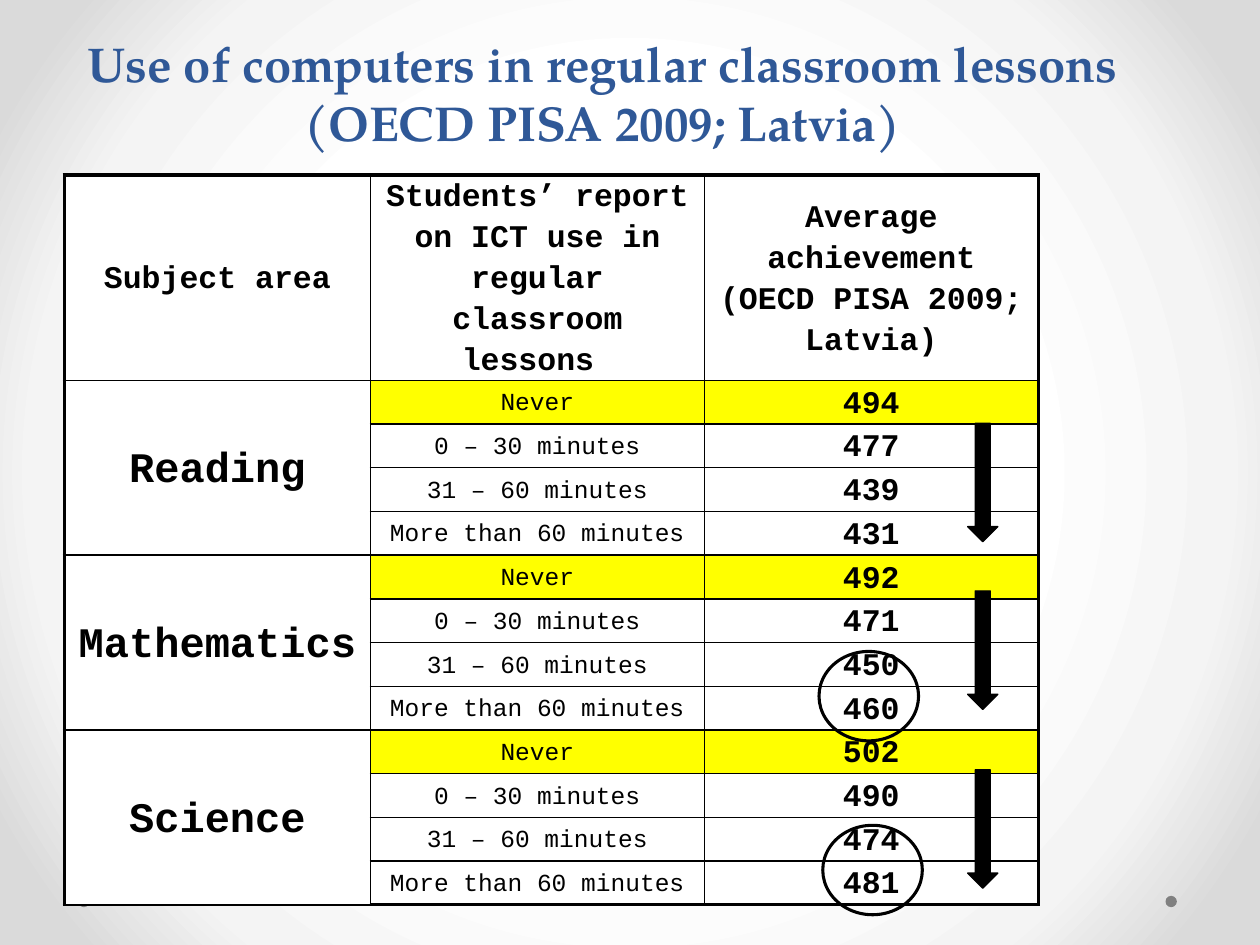
from lxml import etree
from pptx import Presentation
from pptx import util as u
from pptx.dml.color import RGBColor
from pptx.enum import shapes, text
from pptx.oxml import ns

COLS, ROWS = 100, 75
UNIT = u.Inches(0.1)
BLACK = RGBColor(0, 0, 0)
WHITE = RGBColor(0xFF, 0xFF, 0xFF)
YELLOW = RGBColor(0xFF, 0xFF, 0)
BLUE = RGBColor(0x2F, 0x58, 0x97)
GRAY = RGBColor(0x80, 0x80, 0x80)
GLOW = [(50, WHITE), (76, RGBColor(0xF4, 0xF4, 0xF4)), (92, RGBColor(0xDA, 0xDA, 0xDA))]

TITLE = "Use of computers in regular classroom lessons (OECD PISA 2009; Latvia)"
HEADERS = ["Subject area", "Students’ report on ICT use in regular classroom lessons ",
           "Average achievement (OECD PISA 2009; Latvia)"]
USAGE = ["Never", "0 – 30 minutes", "31 – 60 minutes", "More than 60 minutes"]
SCORES = {"Reading": [494, 477, 439, 431],
          "Mathematics": [492, 471, 450, 460],
          "Science": [502, 490, 474, 481]}

HEAD_FONT = {"name": "Courier New", "size": u.Pt(18), "bold": True}
SUBJECT_FONT = {**HEAD_FONT, "size": u.Pt(24)}
USAGE_FONT = {**HEAD_FONT, "size": u.Pt(14), "bold": False}
TITLE_FONT = {"name": "TeX Gyre Pagella", "size": u.Pt(28), "bold": True}


def grid(*cells):
    """Turn grid units into lengths."""
    return [u.Emu(round(c * UNIT)) for c in cells]


def set_attrs(obj, values):
    """Set each attribute in a dict of format values."""
    for name, value in values.items():
        setattr(obj, name, value)


def write(tf, words, font, color):
    """Write one centred run and return its paragraph."""
    p = tf.paragraphs[0]
    p.alignment = text.PP_ALIGN.CENTER
    r = p.add_run()
    r.text = words
    set_attrs(r.font, font)
    r.font.color.rgb = color
    return p


def add_background(s):
    """Fill the background with a glow from the centre."""
    s.background.fill.gradient()
    grad = s.element.find(".//" + ns.qn("a:gradFill"))
    for child in list(grad):
        grad.remove(child)
    stops = etree.SubElement(grad, ns.qn("a:gsLst"))
    for pos, color in GLOW:
        stop = etree.SubElement(stops, ns.qn("a:gs"), pos=str(pos * 1000))
        etree.SubElement(stop, ns.qn("a:srgbClr"), val=str(color))
    way = etree.SubElement(grad, ns.qn("a:path"), path="circle")
    etree.SubElement(way, ns.qn("a:fillToRect"), dict.fromkeys("ltrb", "50000"))


def add_mark(s, kind, box, fill=None, line=None):
    """Place a preset shape with an optional fill and black outline."""
    sp = s.shapes.add_shape(kind, *grid(*box))
    sp.shadow.inherit = False
    if fill is None:
        sp.fill.background()
    else:
        sp.fill.solid()
        sp.fill.fore_color.rgb = fill
    if line is None:
        sp.line.fill.background()
    else:
        sp.line.color.rgb = BLACK
        sp.line.width = u.Pt(line)


def add_title(s, box):
    """Place the slide title."""
    tf = s.shapes.add_textbox(*grid(*box)).text_frame
    set_attrs(tf, {"word_wrap": True, "vertical_anchor": text.MSO_ANCHOR.BOTTOM})
    write(tf, TITLE, TITLE_FONT, BLUE)


def add_borders(cell, outer):
    """Draw thick lines on outer sides and thin lines on the others."""
    tc_pr = cell._tc.get_or_add_tcPr()
    for i, side in enumerate("LRTB"):
        width = u.Pt(2.25 if side in outer else 1)
        ln = etree.Element(ns.qn("a:ln" + side), w=str(width))
        fill = etree.SubElement(ln, ns.qn("a:solidFill"))
        etree.SubElement(fill, ns.qn("a:srgbClr"), val=str(BLACK))
        tc_pr.insert(i, ln)


def fill_cell(cell, words, font, fill):
    """Write and colour one table cell."""
    set_attrs(cell, {"margin_left": u.Inches(0.07), "margin_right": u.Inches(0.07),
                     "margin_top": 0, "margin_bottom": 0,
                     "vertical_anchor": text.MSO_ANCHOR.MIDDLE})
    cell.fill.solid()
    cell.fill.fore_color.rgb = fill
    if words:
        write(cell.text_frame, words, font, BLACK).line_spacing = 1.15


def add_scores(s, box):
    """Place the table of achievement by subject and computer use."""
    n = len(USAGE)
    last = n * len(SCORES)
    frame = s.shapes.add_table(last + 1, len(HEADERS), *grid(*box))
    table = frame.table
    set_attrs(table, {"first_row": False, "horz_banding": False})
    for col, width in zip(table.columns, grid(24.3, 26.5, 26.5)):
        col.width = width
    for row, height in zip(table.rows, grid(10.4, *[3.47] * last)):
        row.height = height
    frame.height = grid(box[3])[0]

    rows = [(HEADERS, [HEAD_FONT] * 3, WHITE)]
    for subject, scores in SCORES.items():
        for i, (usage, score) in enumerate(zip(USAGE, scores)):
            rows.append(([subject if i == 0 else "", usage, str(score)],
                         [SUBJECT_FONT, USAGE_FONT, HEAD_FONT],
                         YELLOW if i == 0 else WHITE))
    for r, (words, fonts, color) in enumerate(rows):
        for c, (word, font) in enumerate(zip(words, fonts)):
            cell = table.cell(r, c)
            fill_cell(cell, word, font, color if c else WHITE)
            outer = ("L" if c == 0 else "") + ("R" if c == 2 else "")
            outer += ("T" if r == 0 else "") + ("B" if r == last else "")
            add_borders(cell, outer)
    for top in range(1, last, n):
        table.cell(top, 0).merge(table.cell(top + n - 1, 0))


def add_trends(s, box):
    """Place the down arrows and circles over the score column."""
    left, top, width, height = box
    for dy in (0, 13.3, 27.5):
        add_mark(s, shapes.MSO_SHAPE.DOWN_ARROW,
                 (left + width - 2.4, top + dy, 2.4, 9.4), BLACK, 0.75)
    for dx, dy in ((0, 18.1), (0.3, 31.9)):
        add_mark(s, shapes.MSO_SHAPE.OVAL, (left + dx, top + dy, 7.9, 7.1), line=1.75)


def add_dots(s, box):
    """Place a dot at each end of the footer."""
    left, top, width, height = box
    for x in (left, left + width - height):
        add_mark(s, shapes.MSO_SHAPE.OVAL, (x, top, height, height), GRAY)


def main():
    """Build and save the slide."""
    prs = Presentation()
    prs.slide_width, prs.slide_height = grid(COLS, ROWS)
    s = prs.slides.add_slide(prs.slide_layouts[6])
    add_background(s)
    add_dots(s, (6.2, 71.1, 87.2, 0.9))
    add_scores(s, (5.1, 13.9, 77.2, 58.8))
    add_trends(s, (65, 33.6, 14.2, 39))
    add_title(s, (2.8, 1.3, 90, 11.2))
    prs.save("out.pptx")


if __name__ == "__main__":
    main()
